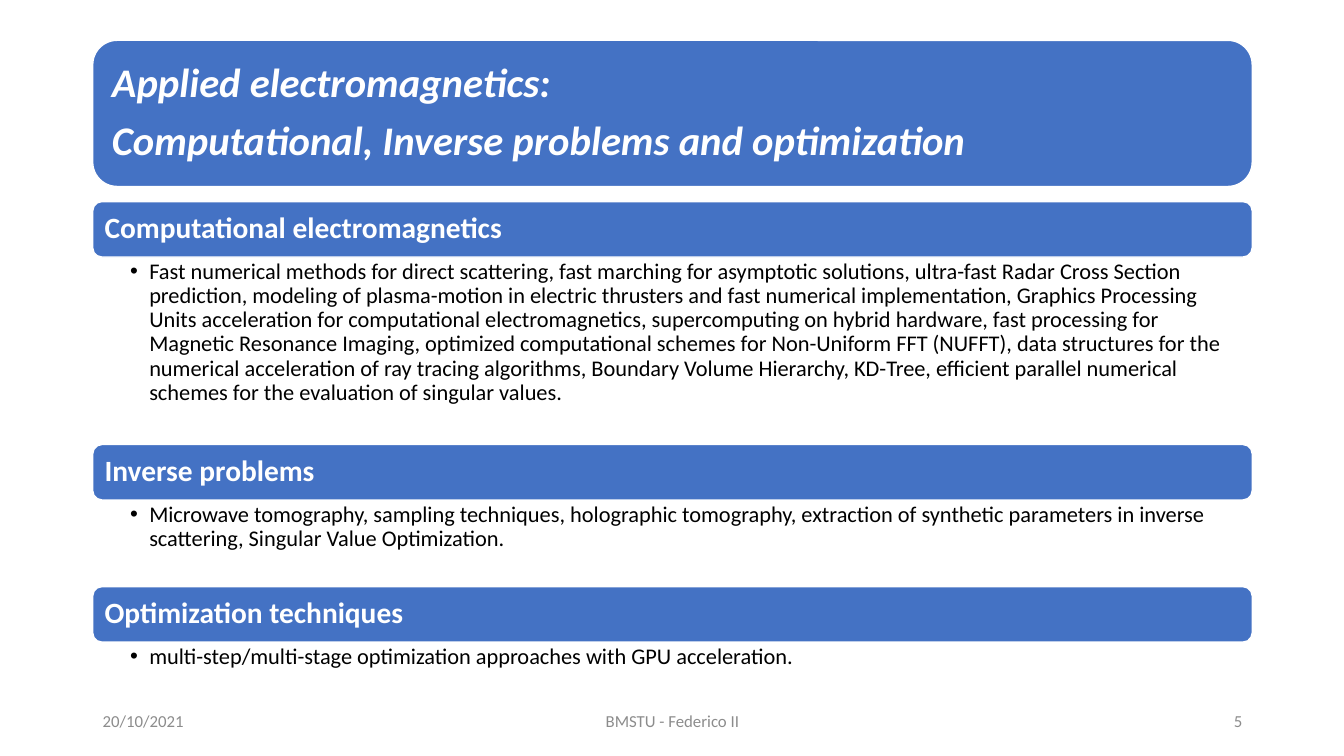
from lxml import etree
from pptx import Presentation
from pptx.dml.color import RGBColor
from pptx.enum import shapes, text
from pptx.oxml import ns
from pptx.util import Inches, Pt

BLUE, WHITE, BLACK, GREY = "4472C4", "FFFFFF", "000000", "8C8C8C"
LEFT, WIDTH = 0.92, 11.5
BAR = 0.55
ALIGN = text.PP_ALIGN

TOPICS = [
    (2, 1.85, "Computational electromagnetics",
     "Fast numerical methods for direct scattering, fast marching for "
     "asymptotic solutions, ultra-fast Radar Cross Section prediction, "
     "modeling of plasma-motion in electric thrusters and fast numerical "
     "implementation, Graphics Processing Units acceleration for "
     "computational electromagnetics, supercomputing on hybrid hardware, "
     "fast processing for Magnetic Resonance Imaging, optimized "
     "computational schemes for Non-Uniform FFT (NUFFT), data structures "
     "for the numerical acceleration of ray tracing algorithms, Boundary "
     "Volume Hierarchy, KD-Tree, efficient parallel numerical schemes for "
     "the evaluation of singular values."),
    (4.41, 0.86, "Inverse problems",
     "Microwave tomography, sampling techniques, holographic tomography, "
     "extraction of synthetic parameters in inverse scattering, Singular "
     "Value Optimization."),
    (5.82, 0.38, "Optimization techniques",
     "multi-step/multi-stage optimization approaches with GPU "
     "acceleration."),
]

FOOTER = [
    (0.92, 3, "20/10/2021", ALIGN.LEFT),
    (4.42, 4.5, "BMSTU - Federico II", ALIGN.CENTER),
    (9.42, 3, "5", ALIGN.RIGHT),
]


def paint(hue):
    return RGBColor.from_string(hue)


def place(shape, x, y, w, h):
    shape.left, shape.top = Inches(x), Inches(y)
    shape.width, shape.height = Inches(w), Inches(h)


def dot(para):
    """Give the paragraph a round bullet with a hanging indent."""
    props = para._p.get_or_add_pPr()
    props.set("marL", str(Inches(0.19)))
    props.set("indent", str(-Inches(0.19)))
    font = etree.SubElement(props, ns.qn("a:buFont"))
    font.set("typeface", "Arial")
    etree.SubElement(props, ns.qn("a:buChar")).set("char", "•")


def write(shape, lines, size, hue, bold=False, slant=False, align=ALIGN.LEFT,
          anchor=text.MSO_ANCHOR.MIDDLE, pads=(0.1, 0.05, 0.1, 0.05),
          pitch=1.0, gap=0, list_item=False):
    """Fill a shape with paragraphs; gap is the space between them."""
    frame = shape.text_frame
    frame.word_wrap = True
    frame.auto_size = text.MSO_AUTO_SIZE.NONE
    frame.vertical_anchor = anchor
    (frame.margin_left, frame.margin_top,
     frame.margin_right, frame.margin_bottom) = map(Inches, pads)
    for i, line in enumerate(lines):
        para = frame.add_paragraph() if i else frame.paragraphs[0]
        if list_item:
            para.level = 1
            dot(para)
        para.alignment = align
        para.line_spacing = pitch
        para.space_before = Pt(0)
        para.space_after = Pt(gap if i < len(lines) - 1 else 0)
        run = para.add_run()
        run.text = line
        font = run.font
        font.name, font.size = "Calibri", Pt(size)
        font.bold, font.italic = bold, slant
        font.color.rgb = paint(hue)


def add_bar(slide, y, h):
    """Add a rounded bar behind the placeholders."""
    bar = slide.shapes.add_shape(
        shapes.MSO_SHAPE.ROUNDED_RECTANGLE,
        Inches(LEFT), Inches(y), Inches(WIDTH), Inches(h))
    bar.shadow.inherit = False
    bar.fill.solid()
    bar.fill.fore_color.rgb = paint(BLUE)
    bar.line.color.rgb = paint(WHITE)
    bar.line.width = Pt(1)
    slide.shapes._spTree.insert(2, bar._element)
    return bar


def add_title(slide):
    add_bar(slide, 0.4, 1.45)
    title = slide.shapes.title
    place(title, 0.99, 0.47, 11.36, 1.31)
    write(title, ["Applied electromagnetics:",
                  "Computational, Inverse problems and optimization"],
          29, WHITE, bold=True, slant=True, pads=(0.12,) * 4,
          pitch=0.9, gap=10)


def add_topic(slide, body, y, h, head, item):
    write(add_bar(slide, y, BAR), [head], 21, WHITE, bold=True,
          pads=(0.09,) * 4, pitch=0.9)
    place(body, LEFT, y + BAR, WIDTH, h)
    write(body, [item], 16, BLACK, anchor=text.MSO_ANCHOR.TOP,
          pads=(0.37, 0.03, 0.16, 0.03), pitch=0.9, list_item=True)


def add_foot(slide, x, w, line, align):
    box = slide.shapes.add_textbox(
        Inches(x), Inches(6.95), Inches(w), Inches(0.4))
    write(box, [line], 12, GREY, align=align)


def main():
    deck = Presentation()
    deck.slide_width, deck.slide_height = Inches(13.33), Inches(7.5)
    slide = deck.slides.add_slide(
        deck.slide_layouts.get_by_name("Comparison"))
    add_title(slide)
    bodies = list(slide.placeholders)[1:]
    for body, topic in zip(bodies, TOPICS):
        add_topic(slide, body, *topic)
    for spare in bodies[len(TOPICS):]:
        spare._element.getparent().remove(spare._element)
    for part in FOOTER:
        add_foot(slide, *part)
    deck.save("out.pptx")


if __name__ == "__main__":
    main()
